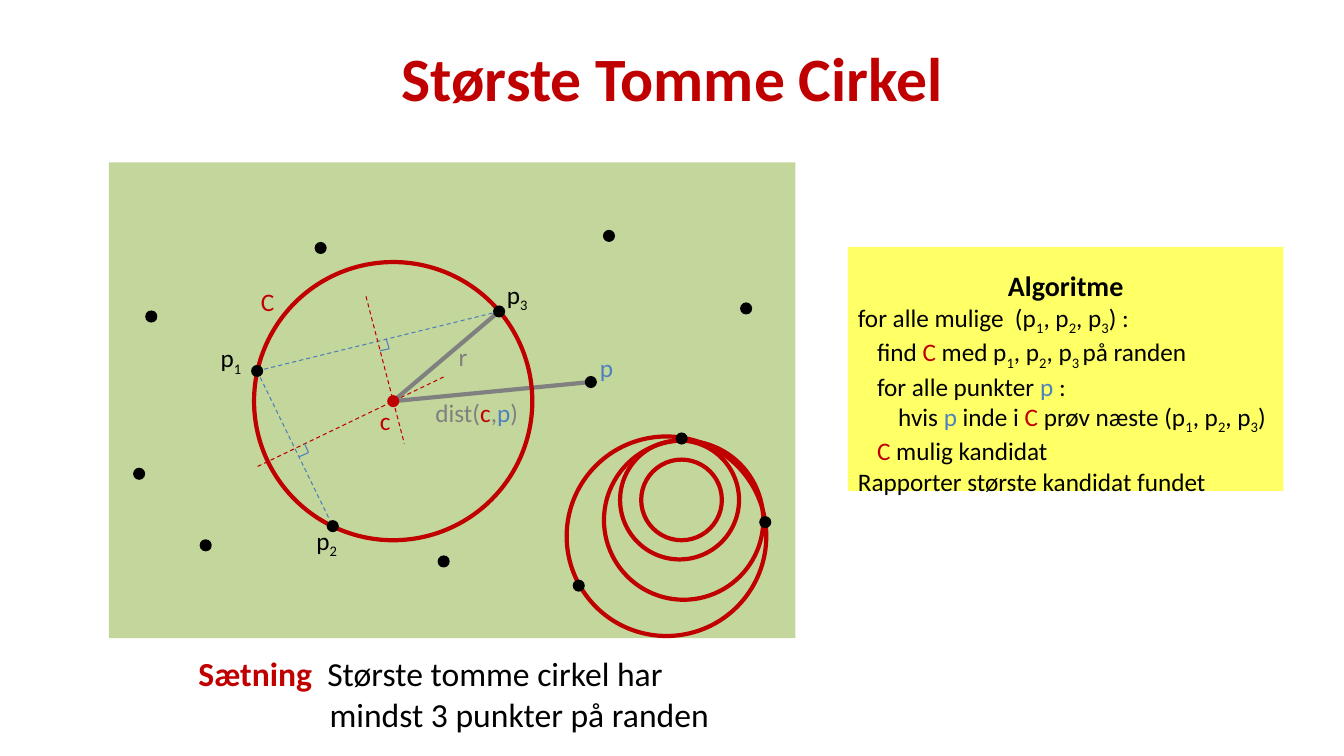
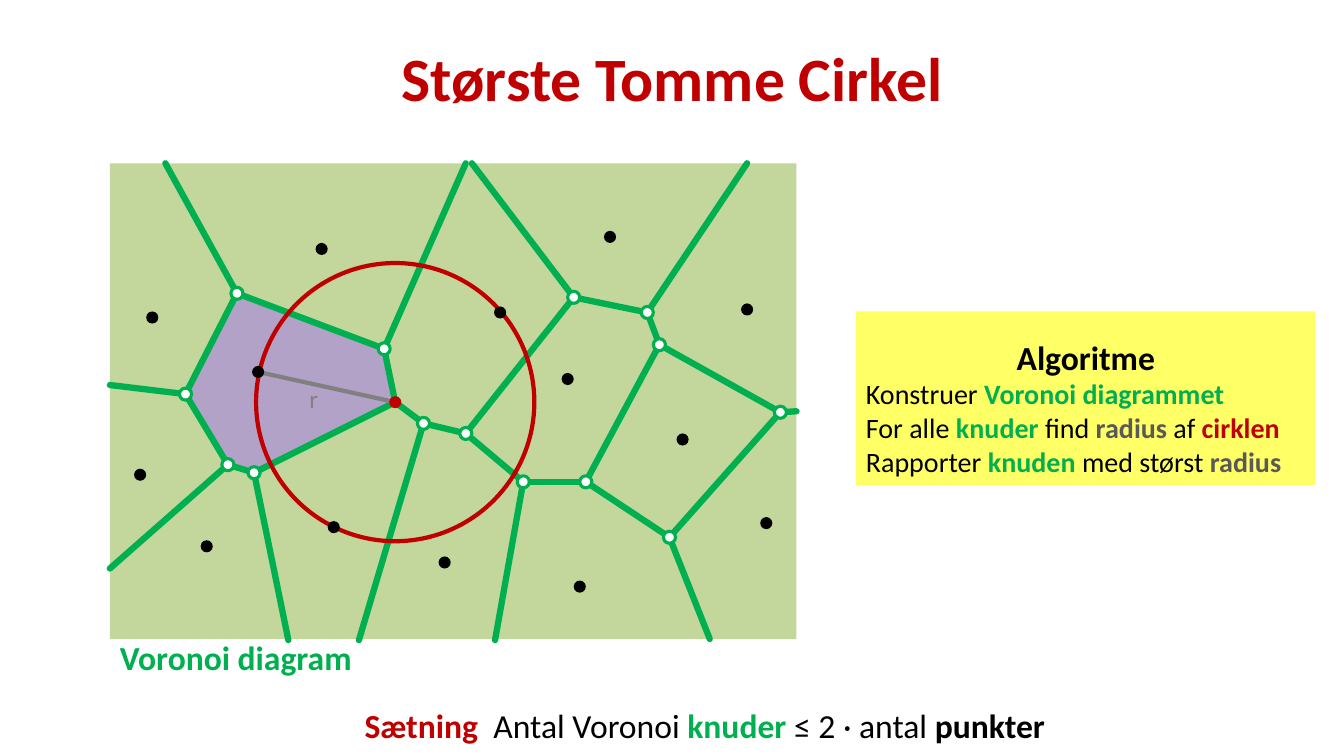
"""Builds two slides on the largest empty circle of a point set."""
from lxml.etree import SubElement
from pptx import Presentation
from pptx.dml.color import RGBColor
from pptx.enum.dml import MSO_LINE
from pptx.enum.shapes import MSO_CONNECTOR, MSO_SHAPE
from pptx.enum.text import MSO_ANCHOR, PP_ALIGN
from pptx.oxml.ns import qn
from pptx.util import Inches, Pt

FONT = "Calibri"
BLACK, WHITE, RED, GREEN = "000000", "FFFFFF", "C00000", "00B050"
BLUE, MARK_BLUE, GRAY, DARK_GRAY = "4F81BD", "4B7EBC", "808080", "595959"
FIELD, YELLOW, PURPLE, CELL_LINE = "C3D69B", "FFFF66", "B3A2C7", "3A5F8C"

TITLE = "Største Tomme Cirkel"
TITLE_BOX = (1.67, 0.14, 10, 1.25)
FIELD_BOX = (1.08, 1.61, 6.81, 4.72)
DOT = 0.06
CENTER, RADIUS = (3.9, 3.98), 1.38
P1, P2, P3 = (2.55, 3.68), (3.3, 5.22), (4.95, 3.09)
SITES = [
    P1, P2, P3, (6.04, 2.34), (4.4, 5.57), (3.18, 2.46), (2.04, 5.41), (7.4, 3.06),
    (1.5, 3.14), (1.38, 4.7), (5.74, 5.81), (7.59, 5.18), (6.76, 4.35),
]
SHIFT = 0.01

RED_RUN, BLUE_RUN = {"color": RED}, {"color": BLUE}
RED_BOLD, GREEN_BOLD = {"color": RED, "bold": True}, {"color": GREEN, "bold": True}
GRAY_BOLD = {"color": DARK_GRAY, "bold": True}
SUB = {"subscript": True}
TRIPLE = ["p", ("1", SUB), ", p", ("2", SUB), ", p", ("3", SUB)]

QUERY = (5.86, 3.79)
CHORDS = [
    (P1, P3, MARK_BLUE), (P1, P2, MARK_BLUE),
    ((4.4, 3.74), (2.53, 4.64), RED), ((3.63, 2.94), (4.01, 4.4), RED),
]
RIGHT_ANGLES = [
    ((3.06, 4.49), (2.97, 4.53)), ((3.06, 4.49), (3.02, 4.4)),
    ((3.86, 3.46), (3.83, 3.36)), ((3.86, 3.46), (3.77, 3.48)),
]
GROWING_CIRCLES = [
    ((6.76, 4.96), 0.4), ((6.78, 5.16), 0.79), ((6.74, 4.96), 0.59), ((6.61, 5.32), 0.99),
]
LABELS = [
    (4.93, 2.72, 0.52, ["p", ("3", SUB)], BLACK),
    (3.04, 5.16, 0.52, ["p", ("2", SUB)], BLACK),
    (2.09, 3.35, 0.52, ["p", ("1", SUB)], BLACK),
    (4.45, 3.34, 0.52, ["r"], GRAY),
    (2.49, 2.79, 0.52, ["C"], RED),
    (3.67, 3.97, 0.52, ["c"], RED),
    (5.85, 3.45, 0.52, ["p"], BLUE),
    (4.22, 3.89, 1.07, ["dist(", ("c", RED_RUN), ",", ("p", BLUE_RUN), ")"], GRAY),
]
SEARCH_STEPS = [
    (0, ["for alle mulige  (", *TRIPLE, ") :"]),
    (0.19, ["find ", ("C ", RED_RUN), "med ", *TRIPLE[:-1], ("3 ", SUB), "på randen"]),
    (0.19, ["for alle punkter ", ("p", BLUE_RUN), " :"]),
    (0.4, ["hvis ", ("p", BLUE_RUN), " inde i ", ("C", RED_RUN), " prøv næste (", *TRIPLE, ")"]),
    (0.19, [("C", RED_RUN), " mulig kandidat"]),
    (0, ["Rapporter største kandidat fundet"]),
]
CIRCLE_THEOREM = [
    (0, [("Sætning", RED_BOLD), "  Største tomme cirkel har"]),
    (1.3, ["mindst 3 punkter på randen"]),
]

CENTER_NODE = "center"
NODES = {
    "a": (2.35, 2.91), "b": (1.84, 3.91), "c": (2.26, 4.61), "d": (2.52, 4.69),
    "e": (6.64, 5.33), "f": (7.74, 4.09), "g": (5.81, 4.78), "h": (5.19, 4.78),
    "i": (6.54, 3.42), "j": (6.42, 3.1), "k": (5.69, 2.95), "l": (4.62, 4.3),
    "m": (4.2, 4.2), "n": (3.81, 3.46), CENTER_NODE: (3.92, 3.99),
}
CELL = ["b", "c", "d", CENTER_NODE, "n", "a"]
EDGES = [
    *zip(CELL, CELL[1:] + CELL[:1]),
    *[tuple(pair) for pair in "ef eg fi ij gi gh hl kl kj ml".split()],
    (CENTER_NODE, "m"),
]
RAYS = [
    ("a", (1.64, 1.62)), ("b", (1.09, 3.82)), ("c", (1.09, 5.64)), ("d", (2.86, 6.35)),
    ("e", (7.04, 6.34)), ("m", (3.56, 6.35)), ("h", (4.91, 6.35)), ("k", (4.68, 1.62)),
    ("j", (7.41, 1.62)), ("n", (4.62, 1.62)), ("f", (7.9, 4.08)),
]
EXTRA_SITE = (5.63, 3.76)
VORONOI_STEPS = [
    (0, ["Konstruer ", ("Voronoi diagrammet", GREEN_BOLD)]),
    (0, ["For alle ", ("knuder ", GREEN_BOLD), "find ", ("radius", GRAY_BOLD), " af ",
         ("cirklen", RED_BOLD)]),
    (0, ["Rapporter ", ("knuden ", GREEN_BOLD), "med størst ", ("radius", GRAY_BOLD)]),
]
NODE_THEOREM = [
    (0, [("Sætning  ", RED_BOLD), "Antal Voronoi ", ("knuder", GREEN_BOLD),
         " ≤ 2 · antal ", ("punkter", {"bold": True})]),
]


def rgb(value):
    return RGBColor.from_string(value)


def inches(values):
    return [Inches(value) for value in values]


def moved(point, shift=SHIFT):
    return point[0] + shift, point[1] + shift


def paint(shape, fill=None, line=None, width=1):
    shape.shadow.inherit = False
    if fill:
        shape.fill.solid()
        shape.fill.fore_color.rgb = rgb(fill)
    else:
        shape.fill.background()
    if line:
        shape.line.color.rgb = rgb(line)
        shape.line.width = Pt(width)
    else:
        shape.line.fill.background()
    return shape


def add_rectangle(slide, box, fill):
    return paint(slide.shapes.add_shape(MSO_SHAPE.RECTANGLE, *inches(box)), fill)


def add_circle(slide, center, radius, **style):
    box = (center[0] - radius, center[1] - radius, 2 * radius, 2 * radius)
    paint(slide.shapes.add_shape(MSO_SHAPE.OVAL, *inches(box)), **style)


def add_line(slide, start, end, color, width, dashed=False, rounded=False):
    connector = slide.shapes.add_connector(MSO_CONNECTOR.STRAIGHT, *inches(start + end))
    connector.line.color.rgb = rgb(color)
    connector.line.width = Pt(width)
    if dashed:
        connector.line.dash_style = MSO_LINE.DASH
    properties = connector.element.spPr
    if rounded:
        properties.find(qn("a:ln")).set("cap", "rnd")
    SubElement(properties, qn("a:effectLst"))


def add_run(paragraph, text, size, color, bold=False, subscript=False):
    run = paragraph.add_run()
    run.text = text
    run.font.name = FONT
    run.font.size = Pt(size)
    run.font.bold = bold
    run.font.color.rgb = rgb(color)
    if subscript:
        run.font._element.set("baseline", "-25000")


def add_text(slide, box, paragraphs, size=24, color=BLACK, bold=False, fill=None,
             align=PP_ALIGN.LEFT, anchor=MSO_ANCHOR.TOP, heading=None, heading_size=24):
    if fill:
        shape = add_rectangle(slide, box, fill)
    else:
        shape = slide.shapes.add_textbox(*inches(box))
    frame = shape.text_frame
    frame.word_wrap = True
    frame.vertical_anchor = anchor
    paragraph = frame.paragraphs[0]
    if heading:
        paragraph.alignment = PP_ALIGN.CENTER
        paragraph.line_spacing = 1.5
        add_run(paragraph, heading, heading_size, color, bold=True)
    for index, (indent, runs) in enumerate(paragraphs):
        if heading or index:
            paragraph = frame.add_paragraph()
        paragraph.alignment = align
        if indent:
            paragraph._p.get_or_add_pPr().set("marL", str(Inches(indent)))
        for run in runs:
            text, style = (run, {}) if isinstance(run, str) else run
            add_run(paragraph, text, size, **{"color": color, "bold": bold, **style})


def add_base_slide(presentation, shift=0):
    slide = presentation.slides.add_slide(presentation.slide_layouts[6])
    add_rectangle(slide, moved(FIELD_BOX, shift) + FIELD_BOX[2:], FIELD)
    add_text(slide, TITLE_BOX, [(0, [TITLE])], size=44, color=RED, bold=True,
             align=PP_ALIGN.CENTER, anchor=MSO_ANCHOR.MIDDLE)
    return slide


def add_dots(slide, centers, **style):
    for center in centers:
        add_circle(slide, center, DOT, **style)


def build_search_slide(presentation):
    slide = add_base_slide(presentation)
    add_line(slide, CENTER, QUERY, GRAY, 3)
    add_circle(slide, CENTER, RADIUS, line=RED, width=3)
    for start, end, color in CHORDS:
        add_line(slide, start, end, color, 0.75, dashed=True)
    for start, end in RIGHT_ANGLES:
        add_line(slide, start, end, MARK_BLUE, 0.75)
    add_line(slide, CENTER, P3, GRAY, 3)
    for center, radius in GROWING_CIRCLES:
        add_circle(slide, center, radius, line=RED, width=3)
    add_dots(slide, SITES + [QUERY], fill=BLACK)
    add_text(slide, (1.87, 6.43, 6.02, 0.91), CIRCLE_THEOREM)
    add_text(slide, (8.41, 2.45, 4.32, 2.42), SEARCH_STEPS, size=18, fill=YELLOW,
             heading="Algoritme", heading_size=20)
    for left, top, width, runs, color in LABELS:
        add_text(slide, (left, top, width, 0.4), [(0, runs)], size=18, color=color)
    add_dots(slide, [CENTER], fill=RED)


def build_voronoi_slide(presentation):
    slide = add_base_slide(presentation, SHIFT)
    corners = [tuple(inches(NODES[name])) for name in CELL]
    builder = slide.shapes.build_freeform(*corners[0], scale=1.0)
    builder.add_line_segments(corners[1:], close=True)
    paint(builder.convert_to_shape(), PURPLE, CELL_LINE, 2)
    segments = [(NODES[start], NODES[end]) for start, end in EDGES]
    segments += [(NODES[name], end) for name, end in RAYS]
    for start, end in segments:
        add_line(slide, start, end, GREEN, 4.5, rounded=True)
    center = NODES[CENTER_NODE]
    add_line(slide, center, moved(P1), GRAY, 3)
    add_text(slide, (1.09, 6.27, 6.81, 0.5), [(0, ["Voronoi diagram"])], color=GREEN, bold=True)
    add_dots(slide, [point for name, point in NODES.items() if name != CENTER_NODE],
             fill=WHITE, line=GREEN, width=2.25)
    add_dots(slide, [center], fill=RED)
    add_circle(slide, center, RADIUS, line=RED, width=3)
    add_dots(slide, [moved(site) for site in SITES] + [EXTRA_SITE], fill=BLACK)
    add_text(slide, (8.49, 3.09, 4.56, 1.72), VORONOI_STEPS, size=20, fill=YELLOW,
             heading="Algoritme")
    add_text(slide, (2.34, 6.94, 9.3, 0.5), NODE_THEOREM, align=PP_ALIGN.CENTER)
    add_text(slide, (2.97, 3.75, 0.52, 0.4), [(0, ["r"])], size=18, color=GRAY)


def main():
    presentation = Presentation()
    presentation.slide_width, presentation.slide_height = inches((13.33, 7.5))
    build_search_slide(presentation)
    build_voronoi_slide(presentation)
    presentation.save("out.pptx")


if __name__ == "__main__":
    main()
